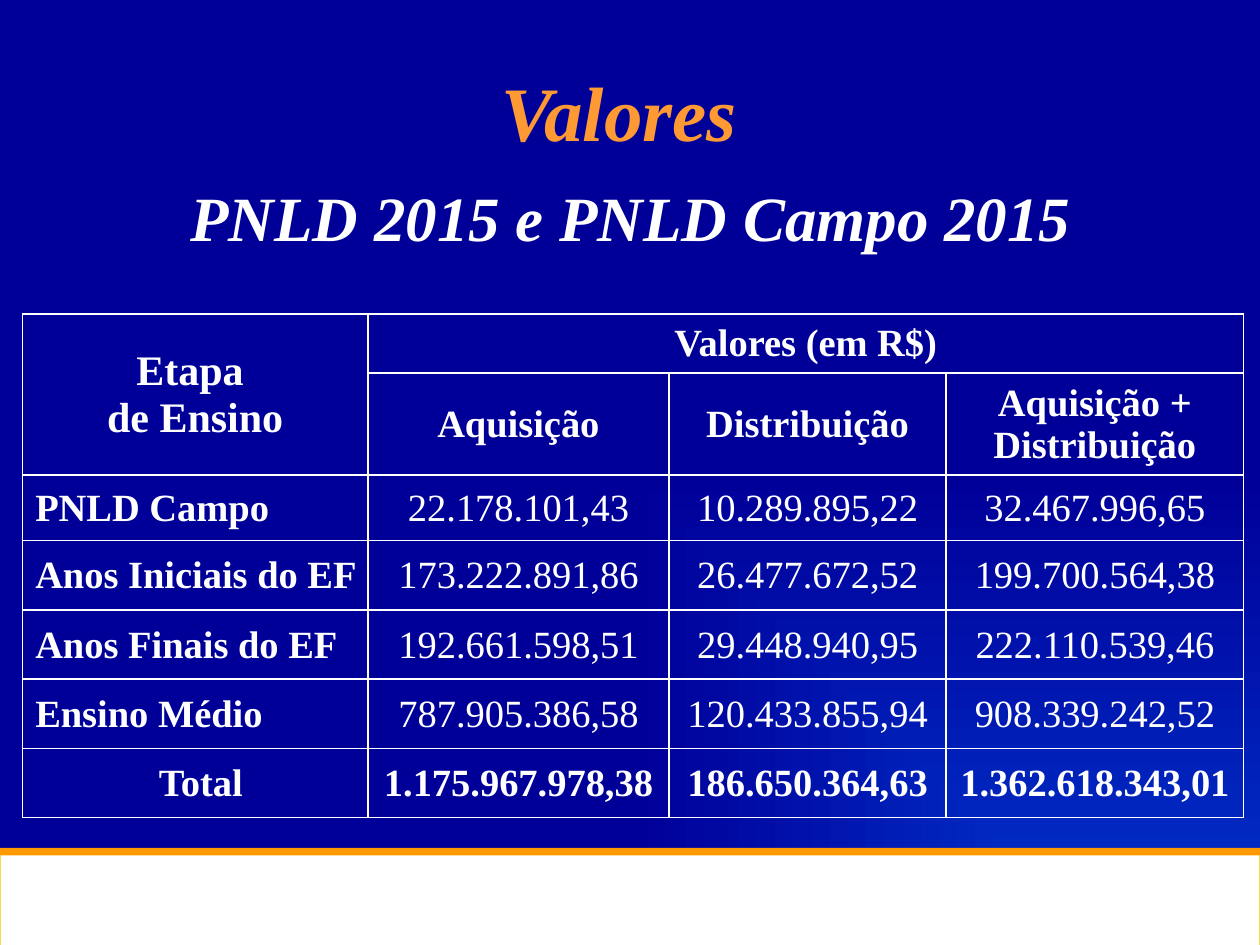
from lxml.etree import SubElement
from pptx import Presentation
from pptx.dml.color import RGBColor
from pptx.enum.shapes import MSO_SHAPE
from pptx.enum.text import MSO_ANCHOR, PP_ALIGN
from pptx.oxml import parse_xml
from pptx.oxml.ns import nsdecls, qn
from pptx.util import Inches, Pt

TITLE = "Valores"
SUBTITLE = "PNLD 2015 e PNLD Campo 2015"
ROWS = [
    ["Etapa \nde Ensino", "Valores (em R$)", "", ""],
    ["", "Aquisição", "Distribuição", "Aquisição +\nDistribuição"],
    ["PNLD Campo", "22.178.101,43", "10.289.895,22", "32.467.996,65"],
    ["Anos Iniciais do EF", "173.222.891,86", "26.477.672,52", "199.700.564,38"],
    ["Anos Finais do EF", "192.661.598,51", "29.448.940,95", "222.110.539,46"],
    ["Ensino Médio", "787.905.386,58", "120.433.855,94", "908.339.242,52"],
    ["Total", "1.175.967.978,38", "186.650.364,63", "1.362.618.343,01"],
]
COLUMN_WIDTHS = [2.74, 2.39, 2.2, 2.36]
ROW_HEIGHTS = [0.47, 0.74, 0.52] + [0.55] * 4
HEADER_ROWS = 2
THEME = {
    "font": "Times New Roman",
    "title": "FF9933", "text": "FFFFFF", "rule": "FF9900",
    "band": "FFFFFF", "band_line": "FADD4D",
    "glow": "0033CC", "ground": "000099",
    "title_size": 44, "subtitle_size": 36, "stage_size": 24, "cell_size": 22,
}


def write_text(frame, text, size, color=THEME["text"], bold=True, italic=False,
               align=PP_ALIGN.CENTER, anchor=MSO_ANCHOR.MIDDLE, indent=0):
    frame.word_wrap = True
    frame.vertical_anchor = anchor
    for index, line in enumerate(text.split("\n")):
        paragraph = frame.add_paragraph() if index else frame.paragraphs[0]
        paragraph.alignment = align
        if indent:
            properties = paragraph._p.get_or_add_pPr()
            properties.set("marL", "0")
            properties.set("indent", str(Inches(indent)))
        run = paragraph.add_run()
        run.text = line
        font = run.font
        font.name, font.size = THEME["font"], Pt(size)
        font.bold, font.italic = bold, italic
        font.color.rgb = RGBColor.from_string(color)


def set_background(slide):
    slide.element.cSld.insert(0, parse_xml(
        f'<p:bg {nsdecls("p", "a")}><p:bgPr><a:gradFill rotWithShape="0"><a:gsLst>'
        f'<a:gs pos="0"><a:srgbClr val="{THEME["glow"]}"/></a:gs>'
        f'<a:gs pos="100000"><a:srgbClr val="{THEME["ground"]}"/></a:gs></a:gsLst>'
        '<a:path path="rect"><a:fillToRect l="100000" t="100000"/></a:path>'
        '</a:gradFill><a:effectLst/></p:bgPr></p:bg>'))


def add_bar(slide, left, top, width, height, fill, line=None):
    shape = slide.shapes.add_shape(MSO_SHAPE.RECTANGLE, Inches(left), Inches(top),
                                   Inches(width), Inches(height))
    shape.shadow.inherit = False
    shape.fill.solid()
    shape.fill.fore_color.rgb = RGBColor.from_string(fill)
    if line:
        shape.line.color.rgb = RGBColor.from_string(line)
        shape.line.width = Pt(0.75)
    else:
        shape.line.fill.background()


def format_cell(cell):
    cell.fill.background()
    cell.vertical_anchor = MSO_ANCHOR.MIDDLE
    cell.margin_left = cell.margin_right = cell.margin_top = Inches(0.01)
    cell.margin_bottom = 0
    properties = cell._tc.get_or_add_tcPr()
    for position, side in enumerate(("lnL", "lnR", "lnT", "lnB")):
        border = SubElement(properties, qn(f"a:{side}"), w=str(Pt(1)))
        SubElement(SubElement(border, qn("a:solidFill")), qn("a:srgbClr"), val=THEME["text"])
        properties.insert(position, border)


def add_values_table(slide):
    table = slide.shapes.add_table(
        len(ROWS), len(COLUMN_WIDTHS), Inches(0.18), Inches(2.49),
        Inches(sum(COLUMN_WIDTHS)), Inches(sum(ROW_HEIGHTS))).table
    table.first_row = table.horz_banding = False
    for column, width in zip(table.columns, COLUMN_WIDTHS):
        column.width = Inches(width)
    for row, height in zip(table.rows, ROW_HEIGHTS):
        row.height = Inches(height)
    table.cell(0, 0).merge(table.cell(1, 0))
    table.cell(0, 1).merge(table.cell(0, 3))
    last = len(ROWS) - 1
    for r, values in enumerate(ROWS):
        for c, value in enumerate(values):
            cell = table.cell(r, c)
            format_cell(cell)
            if not value:
                continue
            label = c == 0 and r >= HEADER_ROWS
            write_text(
                cell.text_frame, value,
                THEME["stage_size"] if r == c == 0 else THEME["cell_size"],
                bold=c == 0 or r < HEADER_ROWS or r == last,
                align=PP_ALIGN.LEFT if label and r < last else PP_ALIGN.CENTER,
                indent=0.09 if label else 0)


def main():
    presentation = Presentation()
    presentation.slide_width, presentation.slide_height = Inches(10), Inches(7.5)
    slide = presentation.slides.add_slide(presentation.slide_layouts[5])
    set_background(slide)

    title = slide.shapes.title
    title.left, title.top = Inches(0.39), Inches(0.39)
    title.width, title.height = Inches(9.05), Inches(0.98)
    write_text(title.text_frame, TITLE, THEME["title_size"], THEME["title"], italic=True)

    add_bar(slide, 0, 6.76, 10, 0.77, THEME["band"], THEME["band_line"])
    add_bar(slide, 0, 6.73, 10.04, 0.06, THEME["rule"])

    subtitle = slide.shapes.add_textbox(Inches(0.2), Inches(1.31), Inches(9.61), Inches(1.02))
    subtitle.text_frame.margin_top = Inches(0.11)
    write_text(subtitle.text_frame, SUBTITLE, THEME["subtitle_size"], italic=True,
               anchor=MSO_ANCHOR.TOP)

    add_values_table(slide)
    presentation.save("out.pptx")


if __name__ == "__main__":
    main()
